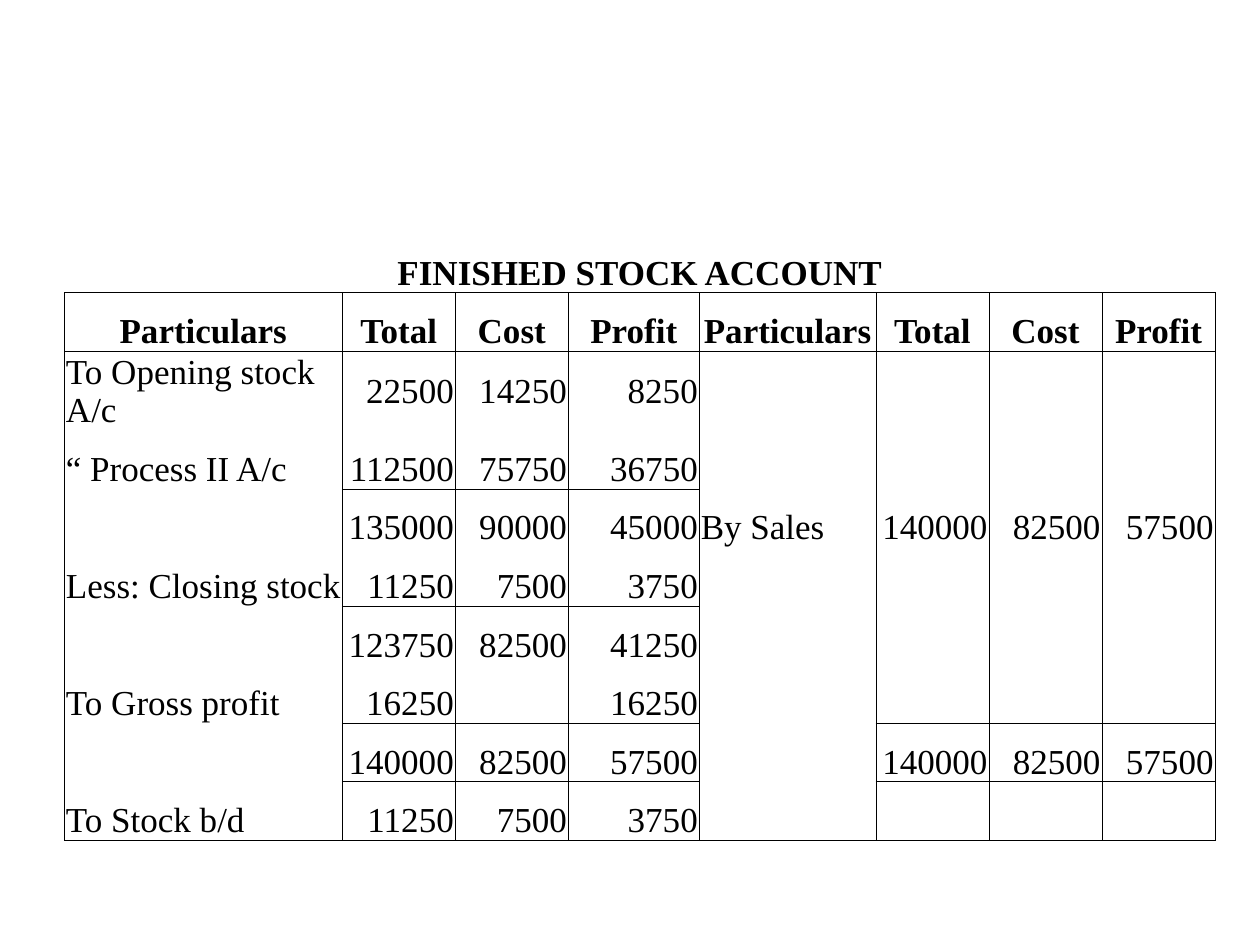
import pptx
import pptx.dml.color
import pptx.enum.text
import pptx.oxml
import pptx.oxml.ns
import pptx.util

Cm = pptx.util.Cm
Pt = pptx.util.Pt
Align = pptx.enum.text.PP_ALIGN
Anchor = pptx.enum.text.MSO_ANCHOR

HUES = {"ink": "000000"}
FONT = {"name": "Times New Roman", "size": Pt(20)}
PAD = {"margin_left": Cm(0.03), "margin_right": Cm(0.03),
       "margin_top": Cm(0.03), "margin_bottom": 0}
WIDTHS = [5.6, 2.28, 2.28, 2.64, 3.56, 2.28, 2.28, 2.28]
HEIGHT = 1.18
HEAD = ["Particulars", "Total", "Cost", "Profit"]
ROWS = [
    ["FINISHED STOCK ACCOUNT"],
    HEAD * 2,
    ["To Opening stock A/c", "22500", "14250", "8250"],
    ["“ Process II A/c", "112500", "75750", "36750"],
    ["", "135000", "90000", "45000", "By Sales", "140000", "82500", "57500"],
    ["Less: Closing stock", "11250", "7500", "3750"],
    ["", "123750", "82500", "41250"],
    ["To Gross profit", "16250", "", "16250"],
    ["", "140000", "82500", "57500", "", "140000", "82500", "57500"],
    ["To Stock b/d", "11250", "7500", "3750"],
]
LABELS = (0, 4)
LAST = len(ROWS) - 1


def apply(target, values):
    """Set every attribute named in a dict of values."""
    for name, value in values.items():
        setattr(target, name, value)


def ruled(row, col):
    """Tell whether a line runs below the given cell."""
    if row in (0, 1, LAST):
        return True
    if col in LABELS:
        return False
    return row in ((3, 5, 7, 8) if col < 4 else (7, 8))


def draw_edge(cell, side, shown):
    """Add one border of a cell, either inked or empty."""
    fill = (f'<a:solidFill><a:srgbClr val="{HUES["ink"]}"/></a:solidFill>'
            if shown else "<a:noFill/>")
    edge = pptx.oxml.parse_xml(
        f'<a:ln{side} {pptx.oxml.ns.nsdecls("a")} w="{Pt(0.5)}">{fill}</a:ln{side}>')
    cell._tc.get_or_add_tcPr().append(edge)


def style_cell(cell, row, col):
    """Give a cell its borders, padding and clear fill."""
    sides = {"L": row > 0, "R": row > 0,
             "T": row > 0 and ruled(row - 1, col), "B": ruled(row, col)}
    for side, shown in sides.items():
        draw_edge(cell, side, shown)
    cell.fill.background()
    apply(cell, PAD)
    cell.vertical_anchor = Anchor.MIDDLE if row == 2 else Anchor.BOTTOM


def write_cell(cell, text, row, col):
    """Write the text of a cell in the style of its row and column."""
    cell.text = text
    line = cell.text_frame.paragraphs[0]
    if row < 2:
        line.alignment = Align.CENTER
    else:
        line.alignment = Align.LEFT if col in LABELS else Align.RIGHT
    for font in [line.font] + [run.font for run in line.runs]:
        apply(font, {**FONT, "bold": row < 2})
        font.color.rgb = pptx.dml.color.RGBColor.from_string(HUES["ink"])


def add_ledger(slide):
    """Add the stock account as a table."""
    frame = slide.shapes.add_table(
        len(ROWS), len(WIDTHS), Cm(1.3), Cm(4.72),
        Cm(sum(WIDTHS)), Cm(HEIGHT * len(ROWS)))
    table = frame.table
    apply(table, {"first_row": False, "horz_banding": False})
    for column, width in zip(table.columns, WIDTHS):
        column.width = Cm(width)
    for row, texts in enumerate(ROWS):
        table.rows[row].height = Cm(HEIGHT)
        for col in range(len(WIDTHS)):
            cell = table.cell(row, col)
            style_cell(cell, row, col)
            write_cell(cell, texts[col] if col < len(texts) else "", row, col)
    table.cell(0, 0).merge(table.cell(0, len(WIDTHS) - 1))


def main():
    """Build the slide and save it."""
    deck = pptx.Presentation()
    apply(deck, {"slide_width": Cm(25.4), "slide_height": Cm(19.05)})
    add_ledger(deck.slides.add_slide(deck.slide_layouts[6]))
    deck.save("out.pptx")


if __name__ == "__main__":
    main()
